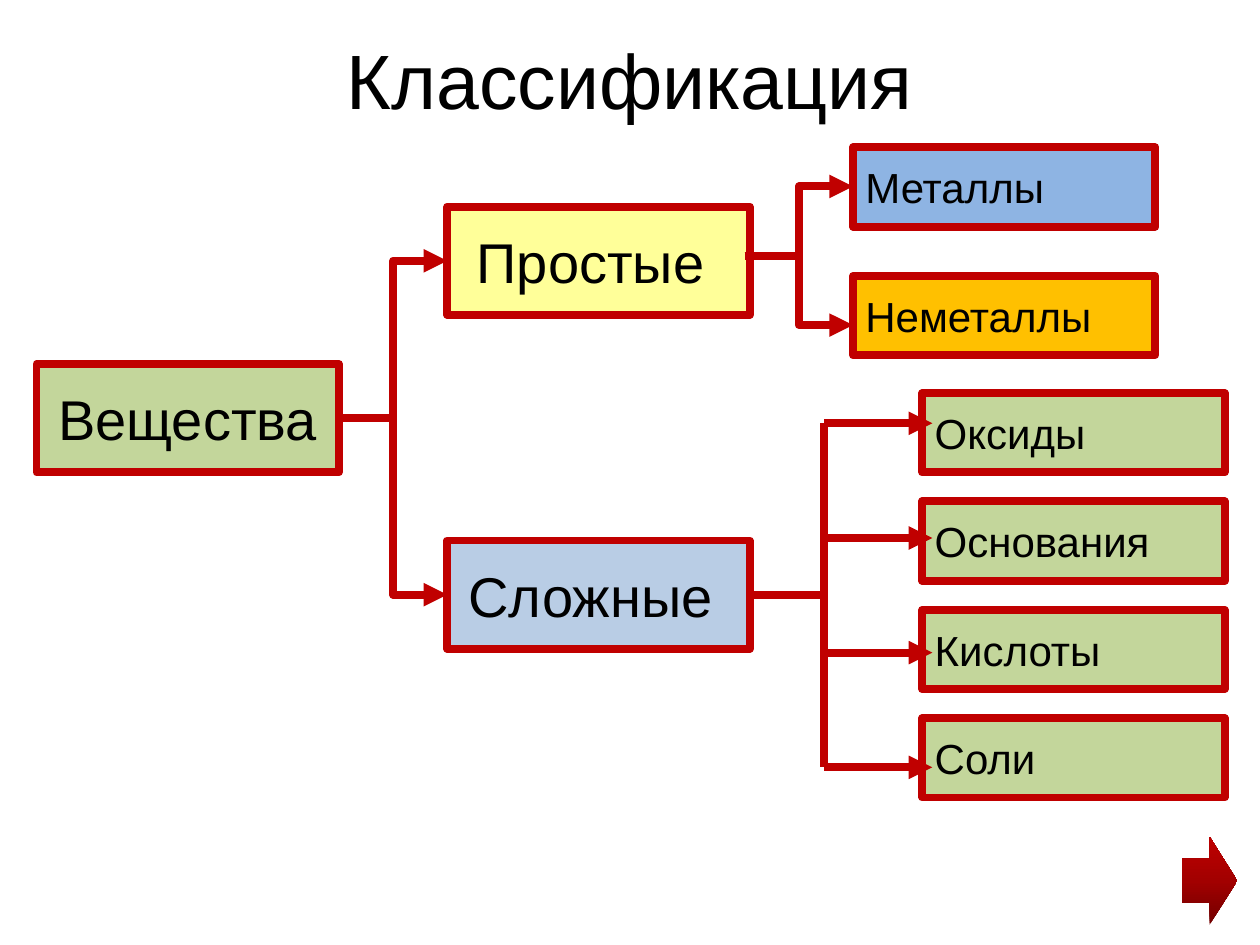
from copy import deepcopy

from lxml import etree
from pptx import Presentation
from pptx.dml.color import RGBColor
from pptx.enum.shapes import MSO_CONNECTOR, MSO_SHAPE
from pptx.enum.text import MSO_ANCHOR, PP_ALIGN
from pptx.oxml.ns import qn
from pptx.util import Inches, Pt

ELBOW, STRAIGHT = MSO_CONNECTOR.ELBOW, MSO_CONNECTOR.STRAIGHT
RECTANGLE, RIGHT_ARROW = MSO_SHAPE.RECTANGLE, MSO_SHAPE.RIGHT_ARROW
MIDDLE = MSO_ANCHOR.MIDDLE
CENTER, LEFT = PP_ALIGN.CENTER, PP_ALIGN.LEFT
LEFT_SIDE, RIGHT_SIDE = 1, 3

FONT = "Arial"
COLORS = {
    "text": "000000", "line": "C00000", "green": "C3D69B", "yellow": "FFFF99",
    "pale_blue": "B9CDE5", "blue": "8EB4E3", "orange": "FFC000",
}
ARROW_GRADIENT = [(0, "720000"), (0.5, "A20000"), (1, "C00000")]

TITLE = "Классификация"
CLASSES = [
    ("Вещества", 0.29, 2.89, "green"),
    ("Простые ", 3.55, 1.64, "yellow"),
    ("Сложные ", 3.55, 4.29, "pale_blue"),
]
SIMPLE_KINDS = [("Металлы", "blue"), ("Неметаллы", "orange")]
COMPLEX_KINDS = ["Оксиды", "Основания", "Кислоты", "Соли"]

BOX_WIDTH, CLASS_HEIGHT, KIND_HEIGHT = 2.4, 0.86, 0.63
SIMPLE_LEFT, SIMPLE_TOP, SIMPLE_STEP = 6.77, 1.17, 1.02
COMPLEX_LEFT, COMPLEX_TOP, COMPLEX_STEP = 7.32, 3.12, 0.86
FORK_LEFT, FORK_MIDDLE, FORK_REACH = 5.91, 2.03, 0.55
TRUNK_LEFT, TRUNK_TOP, TRUNK_STEP = 6.54, 3.36, 0.91
ARROW_LENGTH = 0.86


def rgb(name):
    return RGBColor.from_string(COLORS[name])


def set_text(frame, text, size, align):
    frame.text = text
    frame.vertical_anchor = MIDDLE
    para = frame.paragraphs[0]
    para.alignment = align
    font = para.runs[0].font
    font.name, font.size, font.color.rgb = FONT, Pt(size), rgb("text")


def add_box(page, text, left, top, height, fill, size, align):
    box = page.shapes.add_shape(
        RECTANGLE, Inches(left), Inches(top), Inches(BOX_WIDTH), Inches(height))
    box.shadow.inherit = False
    box.fill.solid()
    box.fill.fore_color.rgb = rgb(fill)
    box.line.color.rgb = rgb("line")
    box.line.width = Pt(4.5)
    set_text(box.text_frame, text, size, align)
    return box


def add_line(page, kind, start=(0, 0), end=(0, 0), arrow=False):
    line = page.shapes.add_connector(kind, *map(Inches, start + end))
    line.line.color.rgb = rgb("line")
    line.line.width = Pt(4.5)
    if arrow:
        outline = line.line._get_or_add_ln()
        etree.SubElement(outline, qn("a:tailEnd"), type="triangle")
    etree.SubElement(line._element.spPr, qn("a:effectLst"))
    return line


def add_next_arrow(page):
    arrow = page.shapes.add_shape(
        RIGHT_ARROW, Inches(9.38), Inches(6.64), Inches(0.44), Inches(0.7))
    arrow.shadow.inherit = False
    arrow.line.fill.background()
    fill = arrow.fill
    fill.gradient()
    fill.gradient_angle = 90
    first = fill.gradient_stops[0]._gs
    first.addnext(deepcopy(first))
    for stop, (position, color) in zip(fill.gradient_stops, ARROW_GRADIENT):
        stop.position = position
        stop.color.rgb = RGBColor.from_string(color)


def main():
    deck = Presentation()
    deck.slide_width, deck.slide_height = Inches(10), Inches(7.5)
    page = deck.slides.add_slide(deck.slide_layouts[5])

    title = page.shapes.title
    title.left, title.top = Inches(0.5), Inches(0)
    title.width, title.height = Inches(9), Inches(1.25)
    set_text(title.text_frame, TITLE, 44, CENTER)

    substances, simple, complex_class = [
        add_box(page, text, left, top, CLASS_HEIGHT, fill, 32, CENTER)
        for text, left, top, fill in CLASSES]
    for row, (text, fill) in enumerate(SIMPLE_KINDS):
        add_box(page, text, SIMPLE_LEFT, SIMPLE_TOP + row * SIMPLE_STEP,
                KIND_HEIGHT, fill, 24, LEFT)
    for row, text in enumerate(COMPLEX_KINDS):
        add_box(page, text, COMPLEX_LEFT, COMPLEX_TOP + row * COMPLEX_STEP,
                KIND_HEIGHT, "green", 24, LEFT)

    for target in (simple, complex_class):
        branch = add_line(page, ELBOW, arrow=True)
        branch.begin_connect(substances, RIGHT_SIDE)
        branch.end_connect(target, LEFT_SIDE)

    for reach in (-FORK_REACH, FORK_REACH):
        add_line(page, ELBOW, (FORK_LEFT, FORK_MIDDLE),
                 (FORK_LEFT + ARROW_LENGTH, FORK_MIDDLE + reach), arrow=True)

    trunk_bottom = TRUNK_TOP + (len(COMPLEX_KINDS) - 1) * TRUNK_STEP
    add_line(page, STRAIGHT, (TRUNK_LEFT, TRUNK_TOP), (TRUNK_LEFT, trunk_bottom))
    for row in range(len(COMPLEX_KINDS)):
        level = TRUNK_TOP + row * TRUNK_STEP
        add_line(page, ELBOW, (TRUNK_LEFT, level),
                 (TRUNK_LEFT + ARROW_LENGTH, level), arrow=True)
    stem = add_line(page, STRAIGHT, end=(TRUNK_LEFT, 4.72))
    stem.begin_connect(complex_class, RIGHT_SIDE)

    add_next_arrow(page)
    deck.save("out.pptx")


if __name__ == "__main__":
    main()
